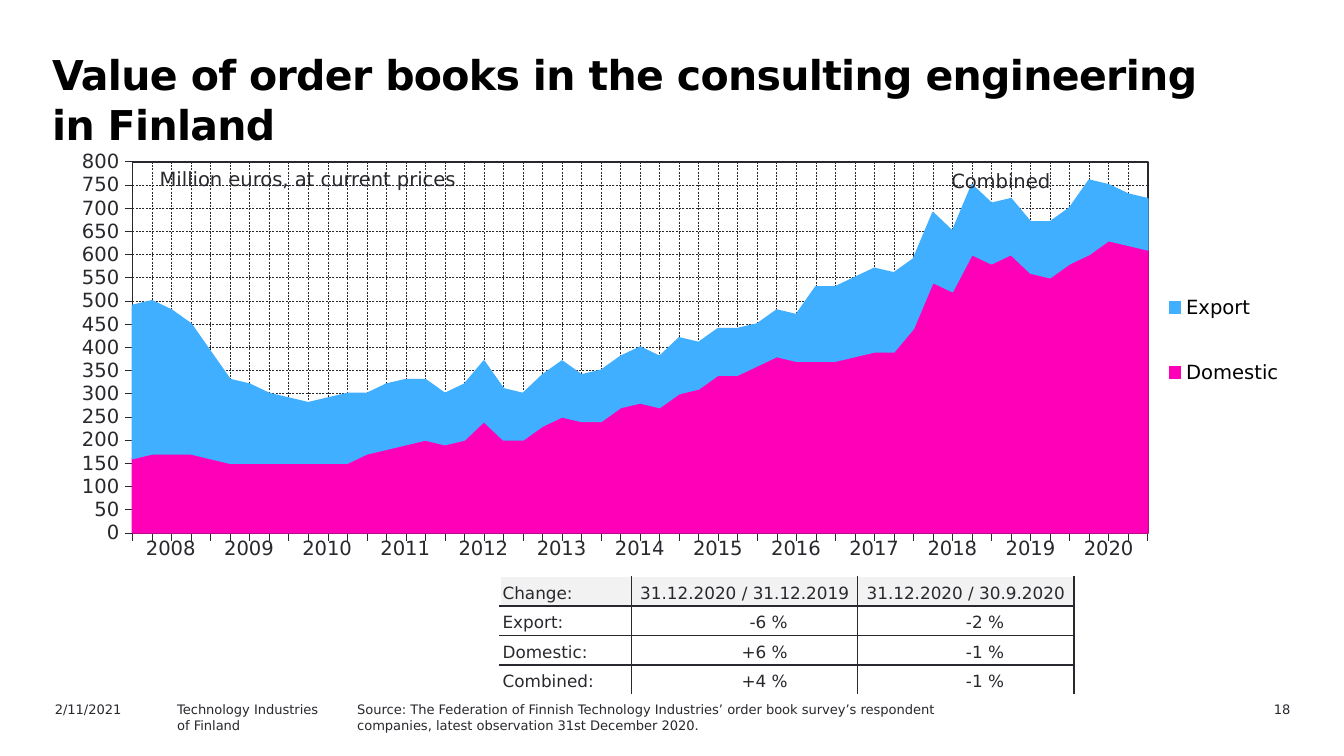
"""Build a slide on the order books of consulting engineering in Finland."""
from lxml.etree import SubElement
from pptx import Presentation
from pptx.chart.data import CategoryChartData
from pptx.dml.color import RGBColor
from pptx.enum.chart import XL_CHART_TYPE as ChartType, XL_LEGEND_POSITION as LegendPosition
from pptx.enum.chart import XL_TICK_LABEL_POSITION as LabelPosition, XL_TICK_MARK as TickMark
from pptx.enum.dml import MSO_LINE_DASH_STYLE as Dash
from pptx.enum.text import MSO_ANCHOR as Anchor, PP_ALIGN as Align
from pptx.oxml.ns import qn
from pptx.util import Inches, Pt

FONT = "DejaVu Sans"
BLACK = RGBColor(0x00, 0x00, 0x00)
INK = RGBColor(0x29, 0x28, 0x2E)
WHITE = RGBColor(0xFF, 0xFF, 0xFF)
HEADER = RGBColor(0xF2, 0xF2, 0xF2)
PINK = RGBColor(0xFF, 0x00, 0xB8)
BLUE = RGBColor(0x40, 0xAF, 0xFF)
NO_STYLE = "{2D5ABB26-0587-4C30-8999-92F81FD0307C}"

TITLE = "Value of order books in the consulting engineering in Finland"
SOURCE = ("Source: The Federation of Finnish Technology Industries’ order book survey’s "
          "respondent companies, latest observation 31st December 2020.")
LABELS = [
    ("Million euros, at current prices", (1.09, 1.19, 2.44, 0.27), dict(wrap=False)),
    ("Combined", (6.98, 1.21, 1.06, 0.27), {}),
    (SOURCE, (2.56, 5.17, 5, 0.26), dict(size=7)),
    ("Technology Industries\nof Finland", (1.22, 5.17, 1.8, 0.18), dict(size=7)),
    ("2/11/2021", (0.31, 5.17, 1, 0.18), dict(size=7)),
    ("18", (8.76, 5.17, 0.94, 0.18), dict(size=7, align=Align.RIGHT)),
]
QUARTERS = [str(number) for number in range(1, 51)]
SERIES = [
    ("Domestic", PINK, [
        160, 170, 170, 170, 160, 150, 150, 150, 150, 150, 150, 150, 170, 180, 190, 200, 190, 200,
        240, 200, 200, 230, 250, 240, 240, 270, 280, 270, 300, 310, 340, 340, 360, 380, 370, 370,
        370, 380, 390, 390, 440, 540, 520, 600, 580, 600, 560, 550, 580, 600, 630, 620, 610]),
    ("Export", BLUE, [
        330, 330, 310, 280, 230, 180, 170, 150, 140, 130, 140, 150, 130, 140, 140, 130, 110, 120,
        130, 110, 100, 110, 120, 100, 110, 110, 120, 110, 120, 100, 100, 100, 90, 100, 100, 160,
        160, 170, 180, 170, 150, 150, 130, 150, 130, 120, 110, 120, 120, 160, 120, 110, 110]),
]
YEARS = [str(year) for year in range(2008, 2021)]
CHANGES = [
    ("Change:", "31.12.2020 / 31.12.2019", "31.12.2020 / 30.9.2020"),
    ("Export:", "-6 %", "-2 %"),
    ("Domestic:", "+6 %", "-1 %"),
    ("Combined:", "+4 %", "-1 %"),
]


def write(frame, text, size=10.5, color=INK, bold=False, align=Align.LEFT, wrap=True,
          line_spacing=None, spacing=None):
    frame.word_wrap = wrap
    for index, line in enumerate(text.split("\n")):
        paragraph = frame.add_paragraph() if index else frame.paragraphs[0]
        paragraph.alignment = align
        paragraph.line_spacing = line_spacing
        run = paragraph.add_run()
        run.text = line
        run.font.size, run.font.name, run.font.bold = Pt(size), FONT, bold
        run.font.color.rgb = color
        if spacing is not None:
            run.font._element.set("spc", str(spacing))


def add_label(slide, text, box, **text_format):
    shape = slide.shapes.add_textbox(*map(Inches, box))
    write(shape.text_frame, text, **text_format)


def add_plain_table(slide, box, widths, row_count):
    table = slide.shapes.add_table(row_count, len(widths), *map(Inches, box)).table
    table._tbl.tblPr.find(qn("a:tableStyleId")).text = NO_STYLE
    table.first_row = table.horz_banding = False
    for column, width in zip(table.columns, widths):
        column.width = Inches(width)
    return table


def set_borders(cell, **colors):
    properties = cell._tc.get_or_add_tcPr()
    for index, side in enumerate("LRTB"):
        line = SubElement(properties, qn(f"a:ln{side}"), w=str(Pt(1)))
        SubElement(SubElement(line, qn("a:solidFill")), qn("a:srgbClr"), val=str(colors[side]))
        properties.insert(index, line)


def set_layout(parent, index, inner=False, **fractions):
    for old in parent.findall(qn("c:layout")):
        parent.remove(old)
    layout = SubElement(parent, qn("c:layout"))
    manual = SubElement(layout, qn("c:manualLayout"))
    if inner:
        SubElement(manual, qn("c:layoutTarget"), val="inner")
    for name in "xy":
        SubElement(manual, qn(f"c:{name}Mode"), val="edge")
    for name, value in fractions.items():
        SubElement(manual, qn(f"c:{name}"), val=str(value))
    parent.insert(index, layout)


def style_font(font, color):
    font.size, font.name, font.bold = Pt(10.5), FONT, False
    font.color.rgb = color


def style_line(line, width, color=INK):
    line.color.rgb = color
    line.width = Pt(width)


def add_order_chart(slide):
    data = CategoryChartData(number_format="#,##0")
    data.categories = QUARTERS
    for name, _, values in SERIES:
        data.add_series(name, values)
    box = map(Inches, (0.42, 1.11, 9.28, 3.12))
    chart = slide.shapes.add_chart(ChartType.AREA_STACKED, *box, data).chart
    chart.has_title = False
    style_font(chart.font, INK)
    plot = chart.plots[0]
    plot.vary_by_categories = False
    for series, (_, color, _) in zip(plot.series, SERIES):
        series.format.fill.solid()
        series.format.fill.fore_color.rgb = color
        style_line(series.format.line, 0.88, color)

    for axis in (chart.category_axis, chart.value_axis):
        axis.major_tick_mark, axis.minor_tick_mark = TickMark.OUTSIDE, TickMark.NONE
        axis.has_major_gridlines = True
        style_line(axis.format.line, 0.22)
        style_line(axis.major_gridlines.format.line, 0.25)
        axis.major_gridlines.format.line.dash_style = Dash.DASH
        style_font(axis.tick_labels.font, INK)
    chart.category_axis.tick_label_position = LabelPosition.NONE
    values = chart.value_axis
    values.minimum_scale, values.maximum_scale, values.major_unit = 0, 800, 50
    values.tick_labels.number_format = "#,##0"
    values.tick_labels.number_format_is_linked = False
    values._element.find(qn("c:crossBetween")).set("val", "midCat")

    area = chart._chartSpace.chart.plotArea
    set_layout(area, 0, inner=True, x=0.061, y=0.03, w=0.814, h=0.885)
    frame = SubElement(area, qn("c:spPr"))
    SubElement(frame, qn("a:noFill"))
    border = SubElement(frame, qn("a:ln"), w=str(Pt(1)))
    SubElement(SubElement(border, qn("a:solidFill")), qn("a:srgbClr"), val=str(INK))

    chart.has_legend = True
    legend = chart.legend
    legend.position, legend.include_in_layout = LegendPosition.RIGHT, False
    style_font(legend.font, BLACK)
    set_layout(legend._element, 1, x=0.876, y=0.25, w=0.12, h=0.41)


def add_change_table(slide):
    table = add_plain_table(slide, (3.72, 4.29, 4.27, 0.88), (0.98, 1.68, 1.61), len(CHANGES))
    for row, texts in enumerate(CHANGES):
        for column, text in enumerate(texts):
            cell = table.cell(row, column)
            is_value = row > 0 and column > 0
            cell.vertical_anchor = Anchor.BOTTOM
            cell.margin_left = cell.margin_top = cell.margin_bottom = Inches(0.02)
            cell.margin_right = Inches(0.52 if is_value else 0.02)
            align = Align.RIGHT if is_value else Align.CENTER if column else Align.LEFT
            write(cell.text_frame, text, size=9, align=align)
            if row in (0, len(CHANGES) - 1):
                cell.fill.solid()
                cell.fill.fore_color.rgb = WHITE if row else HEADER
            set_borders(cell, L=INK if column else WHITE, R=INK, T=INK if row else WHITE,
                        B=INK if row < len(CHANGES) - 1 else WHITE)


def add_year_axis(slide):
    width = 7.56
    table = add_plain_table(slide, (0.98, 3.95, width, 0.31), [width / len(YEARS)] * len(YEARS), 1)
    for column, year in enumerate(YEARS):
        write(table.cell(0, column).text_frame, year, align=Align.CENTER)


def main():
    presentation = Presentation()
    presentation.slide_width, presentation.slide_height = Inches(10), Inches(10 * 9 / 16)
    slide = presentation.slides.add_slide(presentation.slide_layouts[6])
    add_label(slide, TITLE, (0.29, 0.31, 8.74, 0.71), size=22, color=BLACK, bold=True,
              line_spacing=Pt(27), spacing=-34)
    add_order_chart(slide)
    add_change_table(slide)
    add_year_axis(slide)
    for text, box, text_format in LABELS:
        add_label(slide, text, box, **text_format)
    presentation.save("out.pptx")


if __name__ == "__main__":
    main()
